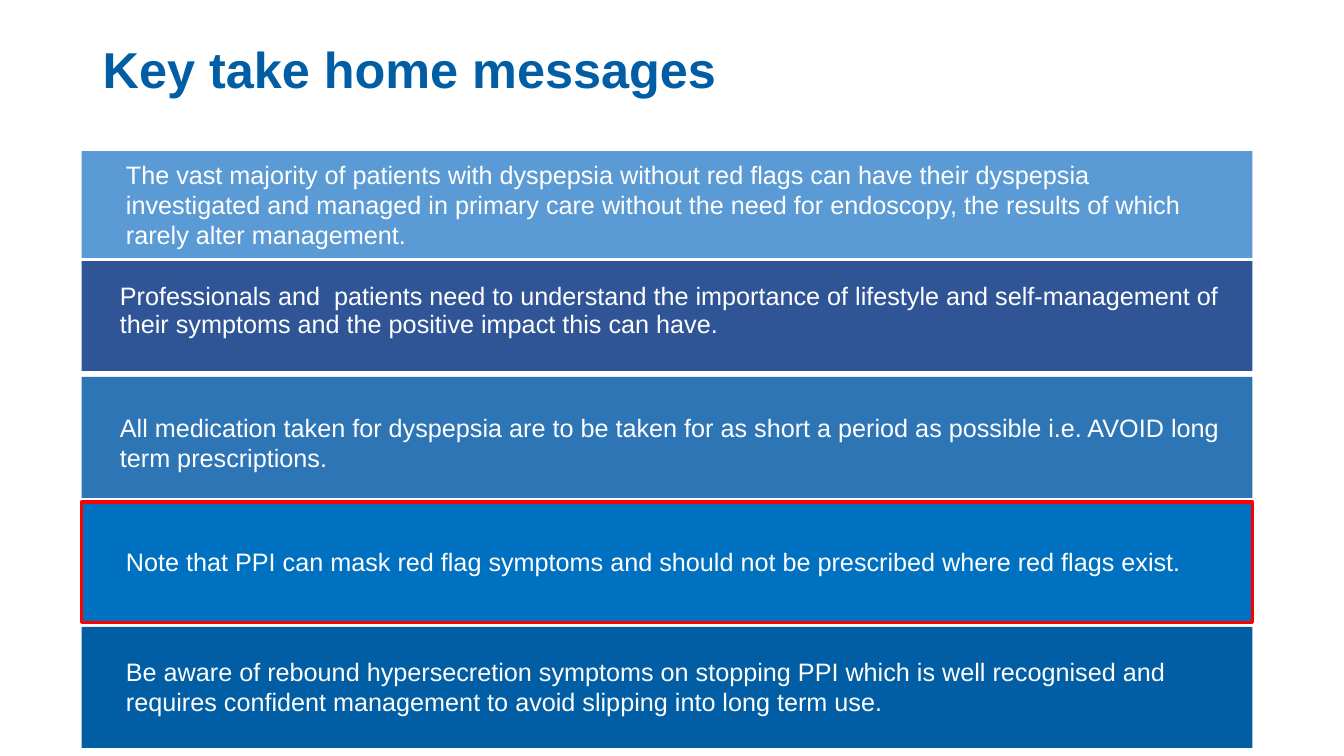
from dataclasses import dataclass
from typing import Optional

from pptx import Presentation
from pptx.dml.color import RGBColor
from pptx.enum.shapes import MSO_SHAPE
from pptx.enum.text import MSO_ANCHOR, PP_ALIGN
from pptx.util import Inches, Pt

SLIDE_WIDTH, SLIDE_HEIGHT = Inches(13.33), Inches(7.5)


@dataclass(frozen=True)
class Theme:
    font: str = "Arial"
    heading: str = "015EA4"
    message: str = "FFFFFF"
    warning: str = "FF0000"
    heading_size: int = 36
    message_size: int = 18
    warning_width: float = 2.25


THEME = Theme()

# Shares of the slide, in percent
BAND_LEFT, BAND_WIDTH = 6.08, 87.1
LINE_HEIGHT, PADDING = 4.04, 1.33


@dataclass(frozen=True)
class Message:
    words: str
    fill: str
    band: tuple  # top, height
    place: tuple  # left, top, width
    lines: int
    spacing: Optional[float] = None
    outline: Optional[str] = None


MESSAGES = [
    Message("The vast majority of patients with dyspepsia without red flags can have "
            "their dyspepsia investigated and managed in primary care without the need "
            "for endoscopy, the results of which rarely alter management.",
            "5B9BD5", (20, 14.13), (8.63, 20.4, 83.12), 3),
    Message("Professionals and  patients need to understand the importance of lifestyle "
            "and self-management of their symptoms and the positive impact this can have.",
            "2F5597", (34.53, 14.53), (8.18, 36.93, 86.27), 2, spacing=0.9),
    Message("All medication taken for dyspepsia are to be taken for as short a period "
            "as possible i.e. AVOID long term prescriptions.",
            "2E75B6", (49.87, 16), (8.18, 53.87, 83.57), 2),
    Message("Note that PPI can mask red flag symptoms and should not be prescribed "
            "where red flags exist.",
            "0070C0", (66.4, 16), (8.63, 71.6, 81.92), 1, outline=THEME.warning),
    Message("Be aware of rebound hypersecretion symptoms on stopping PPI which is well "
            "recognised and requires confident management to avoid slipping into long "
            "term use.",
            "015EA4", (82.93, 16), (8.63, 86.13, 79.37), 2),
]


def area(left, top, width, height):
    """Turn percent shares of the slide into lengths."""
    return (int(SLIDE_WIDTH * left / 100), int(SLIDE_HEIGHT * top / 100),
            int(SLIDE_WIDTH * width / 100), int(SLIDE_HEIGHT * height / 100))


def apply(target, formats):
    for name, value in formats.items():
        setattr(target, name, value)


def add_words(slide, words, place, size, color, bold=False, spacing=None):
    frame = slide.shapes.add_textbox(*area(*place)).text_frame
    apply(frame, {"word_wrap": True, "vertical_anchor": MSO_ANCHOR.TOP})
    paragraph = frame.paragraphs[0]
    apply(paragraph, {"text": words, "alignment": PP_ALIGN.LEFT, "line_spacing": spacing})
    font = paragraph.runs[0].font
    apply(font, {"name": THEME.font, "size": Pt(size), "bold": bold})
    font.color.rgb = RGBColor.from_string(color)


def add_band(slide, message):
    top, height = message.band
    band = slide.shapes.add_shape(MSO_SHAPE.RECTANGLE,
                                  *area(BAND_LEFT, top, BAND_WIDTH, height))
    band.shadow.inherit = False
    band.fill.solid()
    band.fill.fore_color.rgb = RGBColor.from_string(message.fill)
    if message.outline:
        band.line.color.rgb = RGBColor.from_string(message.outline)
        band.line.width = Pt(THEME.warning_width)
    else:
        band.line.fill.background()


def add_message(slide, message):
    add_band(slide, message)
    height = message.lines * LINE_HEIGHT + PADDING
    add_words(slide, message.words, (*message.place, height),
              THEME.message_size, THEME.message, spacing=message.spacing)


def main():
    deck = Presentation()
    apply(deck, {"slide_width": SLIDE_WIDTH, "slide_height": SLIDE_HEIGHT})
    slide = deck.slides.add_slide(deck.slide_layouts[6])

    # Heading
    add_words(slide, "Key take home messages", (6.9, 5.33, 86.27, 19.33),
              THEME.heading_size, THEME.heading, bold=True, spacing=0.9)

    # Stacked message bands
    for message in MESSAGES:
        add_message(slide, message)

    deck.save("out.pptx")


if __name__ == "__main__":
    main()
